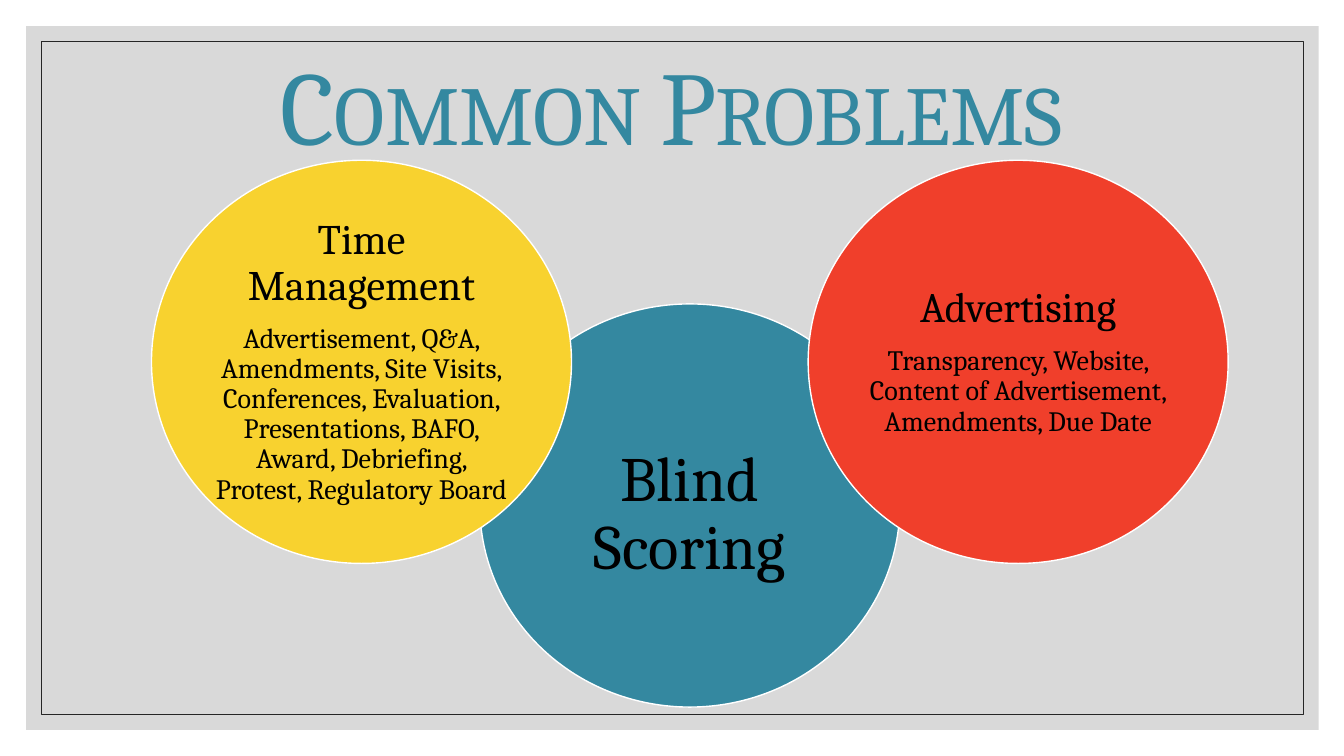
from dataclasses import dataclass
from typing import Optional

from pptx import Presentation
from pptx.dml.color import RGBColor
from pptx.enum.shapes import MSO_SHAPE as Shape
from pptx.enum.text import MSO_ANCHOR as Anchor, PP_ALIGN as Align
from pptx.util import Inches, Pt

COLORS = {
    "panel": "D9D9D9", "frame": "262626", "teal": "3488A0", "yellow": "F8D22F",
    "red": "F03F2B", "white": "FFFFFF", "black": "000000",
}
FONT = "Cambria"
WIDTH, HEIGHT = Inches(13.33), Inches(7.5)

# Positions and sizes are percentages of the slide's width and height.
CIRCLE_LEFT, CIRCLE_STEP = 11.27, 24.43
CIRCLE_SIZE = (31.25, 53.33)
HIGH, LOW = 21.2, 40.2


@dataclass(frozen=True)
class Box:
    left: float
    top: float
    width: float
    height: float

    def emu(self) -> dict[str, int]:
        return {
            "left": round(WIDTH * self.left / 100),
            "top": round(HEIGHT * self.top / 100),
            "width": round(WIDTH * self.width / 100),
            "height": round(HEIGHT * self.height / 100),
        }


@dataclass(frozen=True)
class Line:
    text: str
    size: float


@dataclass(frozen=True)
class Circle:
    column: int
    top: float
    color: str
    lines: tuple[Line, ...]
    drop: float = 0  # extra top margin in inches


PANEL = Box(1.95, 3.47, 96.17, 93.07)
FRAME = Box(3.08, 5.47, 93.92, 89.07)
TITLE = Box(3.08, 6.4, 93.8, 16.67)
CIRCLES = (
    Circle(1, LOW, "teal", (Line("Blind Scoring", 45),), drop=0.2),
    Circle(0, HIGH, "yellow", (
        Line("Time Management", 30),
        Line("Advertisement, Q&A, Amendments, Site Visits, Conferences, Evaluation, "
             "Presentations, BAFO, Award, Debriefing, Protest, Regulatory Board", 20),
    )),
    Circle(2, HIGH, "red", (
        Line("Advertising", 30),
        Line("Transparency, Website, Content of Advertisement, Amendments, Due Date", 20),
    )),
)


def rgb(name: str) -> RGBColor:
    return RGBColor.from_string(COLORS[name])


def set_all(target, values: dict) -> None:
    for name, value in values.items():
        setattr(target, name, value)


def add_outline(slide, kind: Shape, box: Box, fill: Optional[str],
                line: Optional[str], weight: float = 1):
    """Add a preset shape; None means no fill or no line."""
    sp = slide.shapes.add_shape(kind, *box.emu().values())
    sp.shadow.inherit = False
    for part, color in ((sp.fill, fill), (sp.line.fill, line)):
        if color:
            part.solid()
            part.fore_color.rgb = rgb(color)
        else:
            part.background()
    if line:
        sp.line.width = Pt(weight)
    return sp


def write_line(p, line: Line, color: str):
    set_all(p, {"alignment": Align.CENTER, "line_spacing": 0.9})
    r = p.add_run()
    r.text = line.text
    set_all(r.font, {"name": FONT, "size": Pt(line.size), "bold": False})
    r.font.color.rgb = rgb(color)
    return r


def add_circle(slide, circle: Circle) -> None:
    box = Box(CIRCLE_LEFT + circle.column * CIRCLE_STEP, circle.top, *CIRCLE_SIZE)
    sp = add_outline(slide, Shape.OVAL, box, circle.color, "white")
    tf = sp.text_frame
    set_all(tf, {
        "word_wrap": True, "vertical_anchor": Anchor.MIDDLE,
        "margin_left": 0, "margin_right": 0,
        "margin_top": Inches(circle.drop), "margin_bottom": 0,
    })
    for i, line in enumerate(circle.lines):
        p = tf.add_paragraph() if i else tf.paragraphs[0]
        write_line(p, line, "black")
        p.space_after = Pt(line.size * 0.35)


def place_title(slide, text: str) -> None:
    title = slide.shapes.title
    slide.shapes.element.append(title.element)  # bring in front of the panel
    set_all(title, TITLE.emu())
    tf = title.text_frame
    set_all(tf, {"word_wrap": True, "vertical_anchor": Anchor.MIDDLE})
    r = write_line(tf.paragraphs[0], Line(text, 74.7), "teal")
    r.font._element.set("cap", "small")


def main() -> None:
    prs = Presentation()
    set_all(prs, {"slide_width": WIDTH, "slide_height": HEIGHT})
    slide = prs.slides.add_slide(prs.slide_layouts[5])
    add_outline(slide, Shape.RECTANGLE, PANEL, "panel", None)
    add_outline(slide, Shape.RECTANGLE, FRAME, None, "frame", 0.5)
    place_title(slide, "Common Problems")
    for circle in CIRCLES:
        add_circle(slide, circle)
    prs.save("out.pptx")


if __name__ == "__main__":
    main()
